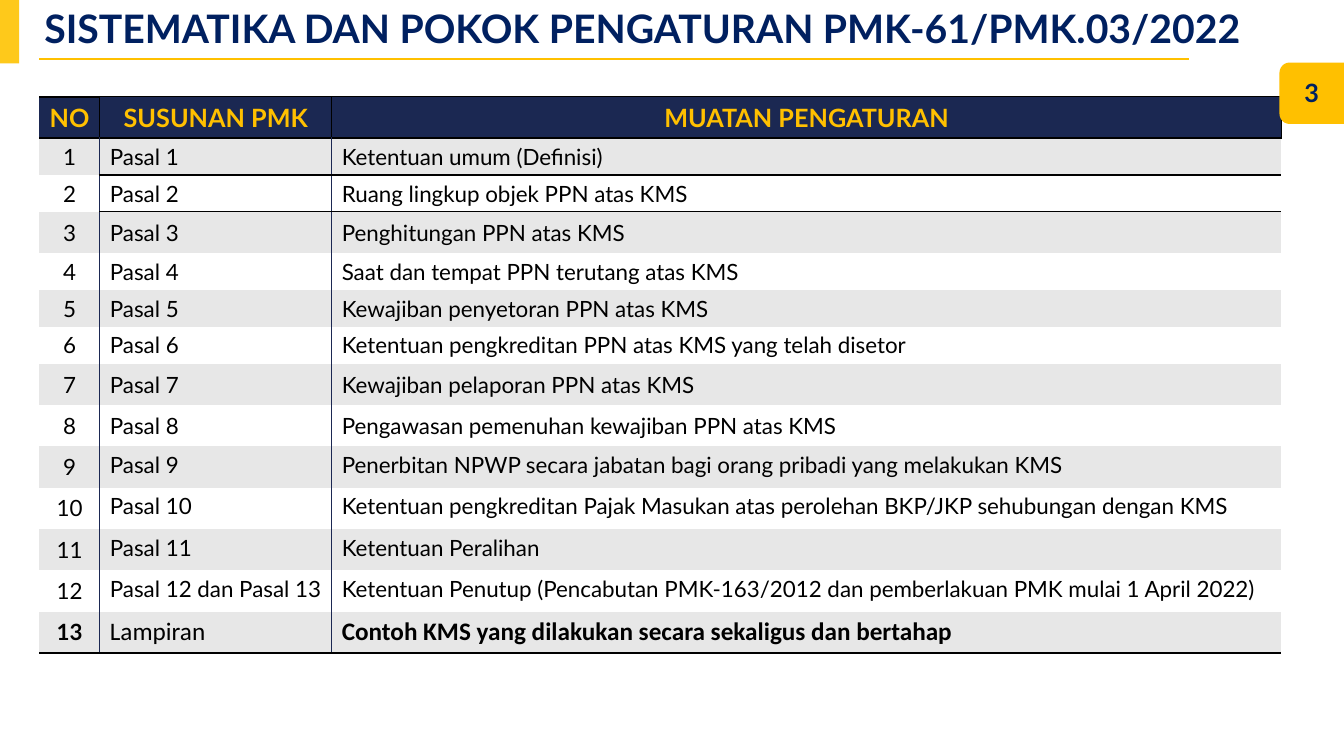
"""Build the slide on the structure and main contents of PMK-61/PMK.03/2022."""
from lxml import etree
from pptx import Presentation
from pptx import util as u
from pptx.dml.color import RGBColor
from pptx.enum import shapes, text
from pptx.oxml import ns

NAVY = RGBColor(0x00, 0x20, 0x60)
HEADER_NAVY = RGBColor(0x1B, 0x28, 0x52)
AMBER = RGBColor(0xFF, 0xC0, 0x00)
YELLOW = RGBColor(0xFE, 0xC9, 0x1B)
BLACK = RGBColor(0x00, 0x00, 0x00)
GREY = RGBColor(0xE7, 0xE7, 0xE7)
WHITE = RGBColor(0xFF, 0xFF, 0xFF)

SLIDE_WIDTH, SLIDE_HEIGHT = 13.33, 7.5
MARGIN = 0.39
COLUMN_WIDTHS = (0.6, 2.3, 9.42)
TALL_ROW, SHORT_ROW = 0.41, 0.36
SHORT_ROWS = {1, 2, 4, 5, 6}
FIRST_TOP_ANCHORED = 9
NO_STYLE = "{2D5ABB26-0587-4C30-8999-92F81FD0307C}"

HEADINGS = ("NO", "SUSUNAN PMK", "MUATAN PENGATURAN")
CONTENTS = (
    "Ketentuan umum (Definisi)",
    "Ruang lingkup objek PPN atas KMS",
    "Penghitungan PPN atas KMS",
    "Saat dan tempat PPN terutang atas KMS",
    "Kewajiban penyetoran PPN atas KMS",
    "Ketentuan pengkreditan PPN atas KMS yang telah disetor",
    "Kewajiban pelaporan PPN atas KMS",
    "Pengawasan pemenuhan kewajiban PPN atas KMS",
    "Penerbitan NPWP secara jabatan bagi orang pribadi yang melakukan KMS",
    "Ketentuan pengkreditan Pajak Masukan atas perolehan BKP/JKP sehubungan dengan KMS",
    "Ketentuan Peralihan",
    "Ketentuan Penutup (Pencabutan PMK-163/2012 dan pemberlakuan PMK mulai 1 April 2022)",
    "Contoh KMS yang dilakukan secara sekaligus dan bertahap",
)
LAST = len(CONTENTS)
ARTICLES = {12: "Pasal 12 dan Pasal 13", 13: "Lampiran"}


def inches(*lengths):
    """Convert lengths in inches to slide units."""
    return [u.Inches(length) for length in lengths]


def write(frame, words, size, color, bold=False, name="Lato", align=text.PP_ALIGN.LEFT):
    """Put one formatted paragraph in a text frame and return it."""
    frame.text = words
    paragraph = frame.paragraphs[0]
    paragraph.alignment = align
    font = paragraph.font
    font.size, font.bold, font.name = u.Pt(size), bold, name
    font.color.rgb = color
    return paragraph


def add_block(slide, preset, box, color):
    """Add a plain filled shape."""
    block = slide.shapes.add_shape(preset, *inches(*box))
    block.shadow.inherit = False
    block.fill.solid()
    block.fill.fore_color.rgb = color
    block.line.fill.background()


def add_title(slide):
    """Place and format the title with its underline."""
    title = slide.shapes.title
    title.left, title.top, title.width, title.height = inches(MARGIN, 0.06, 12, 0.52)
    frame = title.text_frame
    frame.auto_size = text.MSO_AUTO_SIZE.NONE
    frame.vertical_anchor = text.MSO_ANCHOR.MIDDLE
    frame.margin_left = frame.margin_right = u.Inches(0.05)
    frame.margin_top = frame.margin_bottom = u.Inches(0.05)
    heading = write(frame, "SISTEMATIKA DAN POKOK PENGATURAN PMK-61/PMK.03/2022",
                    28, NAVY, True)
    heading.line_spacing = 0.8
    underline = slide.shapes.add_connector(
        shapes.MSO_CONNECTOR.STRAIGHT, *inches(MARGIN, 0.59, 11.79, 0.59))
    underline.line.color.rgb = AMBER
    underline.line.width = u.Pt(1.5)
    etree.SubElement(underline.element.spPr, ns.qn("a:effectLst"))


def set_borders(cell, borders):
    """Draw the given sides of a cell, each as a colour and a width."""
    properties = cell._tc.get_or_add_tcPr()
    for side in "LRTB":
        if side in borders:
            color, width = borders[side]
            line = etree.SubElement(properties, ns.qn("a:ln" + side), w=str(u.Pt(width)))
            fill = etree.SubElement(line, ns.qn("a:solidFill"))
            etree.SubElement(fill, ns.qn("a:srgbClr"), val=str(color))


def cell_borders(row, column):
    """Return the borders that belong to a place in the table."""
    if row == 0:
        if column == 0:
            return {"T": (BLACK, 2), "R": (BLACK, 1), "B": (BLACK, 2)}
        return dict.fromkeys("LRTB", (BLACK, 1))
    borders = {}
    if column > 0:
        borders["L"] = (HEADER_NAVY, 1)
    if column < 2:
        borders["R"] = (HEADER_NAVY, 1)
    if row == 1 and column > 0:
        borders["T"] = borders["B"] = (BLACK, 1)
    if row == 2 and column > 0:
        borders["T"] = (BLACK, 1)
    if row == LAST:
        borders["B"] = (BLACK, 2)
    return borders


def fill_cell(cell, row, column, words):
    """Write and format one cell by its place in the table."""
    centred = row == 0 or column == 0
    align = text.PP_ALIGN.CENTER if centred else text.PP_ALIGN.LEFT
    closing = row == LAST and column > 0
    write(cell.text_frame, words,
          size=18 if row == 0 or closing else 16,
          color=AMBER if row == 0 else BLACK,
          bold=row == 0 or (row == LAST and column != 1),
          name="Calibri" if closing else "Lato",
          align=align)
    top = row >= FIRST_TOP_ANCHORED and column > 0
    cell.vertical_anchor = text.MSO_ANCHOR.TOP if top else text.MSO_ANCHOR.MIDDLE
    set_borders(cell, cell_borders(row, column))
    cell.fill.solid()
    cell.fill.fore_color.rgb = HEADER_NAVY if row == 0 else GREY if row % 2 else WHITE


def add_regulation_table(slide):
    """Add the table of articles and their contents."""
    records = [HEADINGS] + [
        (str(number), ARTICLES.get(number, f"Pasal {number}"), content)
        for number, content in enumerate(CONTENTS, 1)]
    heights = [SHORT_ROW if row in SHORT_ROWS else TALL_ROW for row in range(len(records))]
    table = slide.shapes.add_table(
        len(records), len(HEADINGS),
        *inches(MARGIN, 0.96, sum(COLUMN_WIDTHS), sum(heights))).table
    table.horz_banding = False
    table._tbl.tblPr.find(ns.qn("a:tableStyleId")).text = NO_STYLE
    for column, width in zip(table.columns, COLUMN_WIDTHS):
        column.width = u.Inches(width)
    for row, record in enumerate(records):
        table.rows[row].height = u.Inches(heights[row])
        for column, words in enumerate(record):
            fill_cell(table.cell(row, column), row, column, words)


def add_page_tab(slide):
    """Add the page number on a tab that runs past the right edge."""
    left = 12.69
    add_block(slide, shapes.MSO_SHAPE.ROUNDED_RECTANGLE, (left, 0.62, 1.04, 0.61), AMBER)
    number = slide.shapes.add_textbox(*inches(left, 0.72, SLIDE_WIDTH - left, 0.4))
    number.text_frame.word_wrap = True
    write(number.text_frame, "3", 18, NAVY, True, align=text.PP_ALIGN.CENTER)


def main():
    """Build and save the slide."""
    deck = Presentation()
    deck.slide_width, deck.slide_height = inches(SLIDE_WIDTH, SLIDE_HEIGHT)
    slide = deck.slides.add_slide(deck.slide_layouts[5])
    add_title(slide)
    add_block(slide, shapes.MSO_SHAPE.RECTANGLE, (0, -0.01, 0.19, 0.64), YELLOW)
    add_regulation_table(slide)
    add_page_tab(slide)
    deck.save("out.pptx")


if __name__ == "__main__":
    main()
